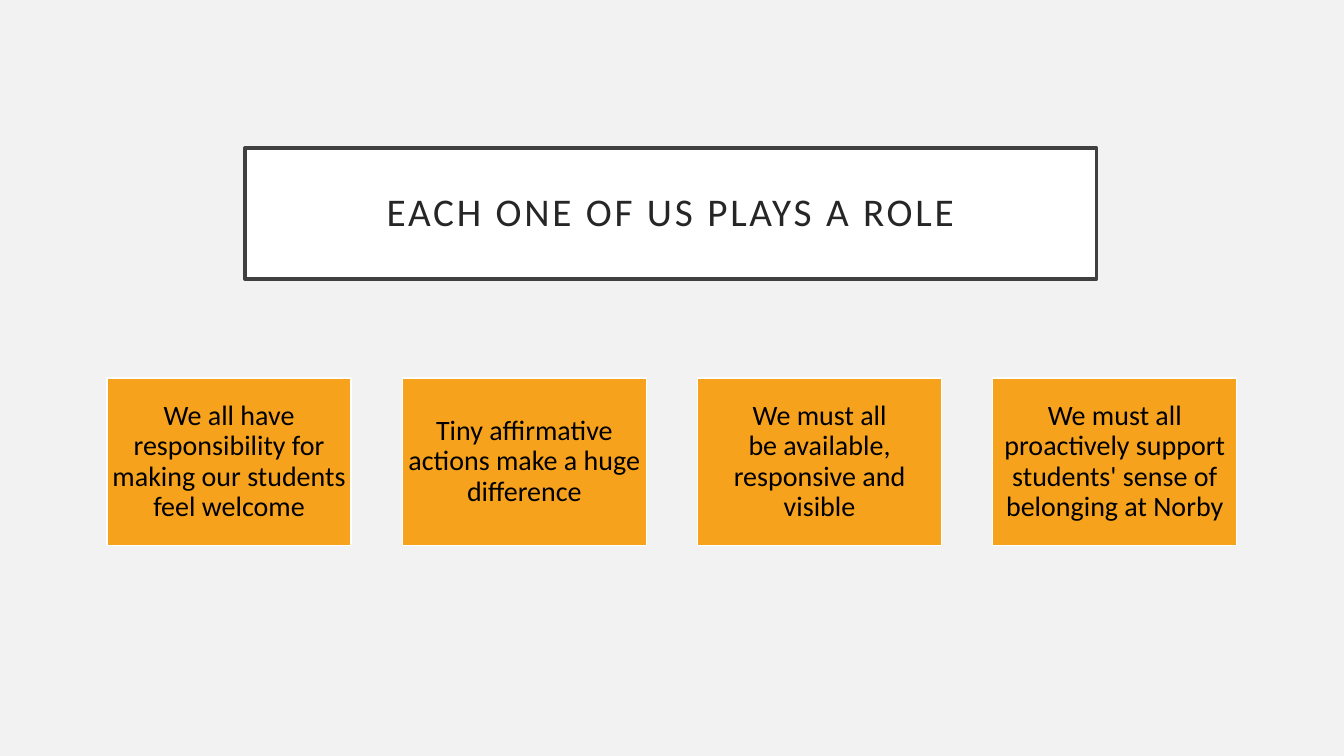
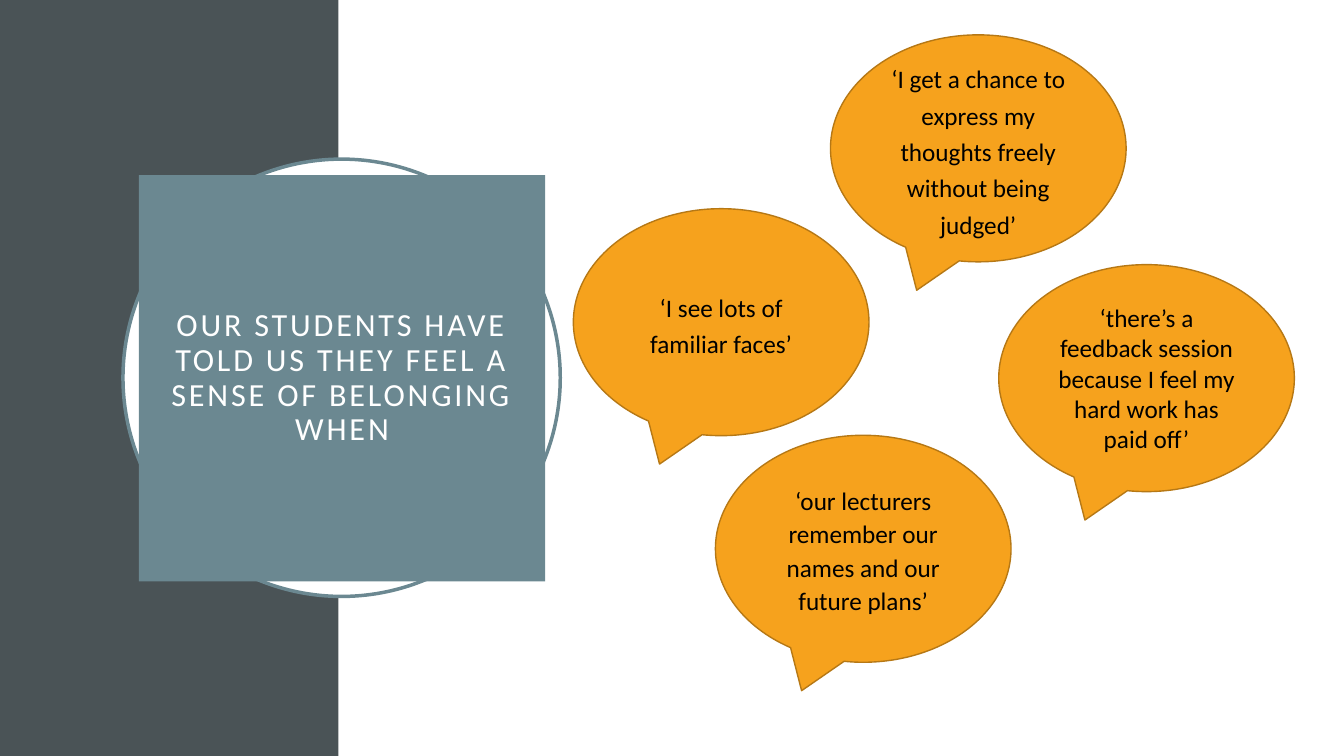
import pptx
import pptx.dml.color
import pptx.enum.shapes
import pptx.enum.text
import pptx.util

Cm = pptx.util.Cm
Pt = pptx.util.Pt
hue = pptx.dml.color.RGBColor.from_string
kinds = pptx.enum.shapes.MSO_SHAPE

gold, slate, teal = "F6A21D", "4A5356", "6B8891"
white, black, pale = "FFFFFF", "000000", "F2F2F2"
hard = chr(160)
frame = {
    "word_wrap": True,
    "auto_size": pptx.enum.text.MSO_AUTO_SIZE.NONE,
    "vertical_anchor": pptx.enum.text.MSO_ANCHOR.MIDDLE,
}
sides = ["margin_left", "margin_top", "margin_right", "margin_bottom"]
tight = dict.fromkeys(sides, Cm(0.03))
roomy = dict.fromkeys(sides, Cm(0.51))


def paint(shape, fill, line=None, width=1):
    shape.fill.solid()
    shape.fill.fore_color.rgb = hue(fill)
    if line:
        shape.line.color.rgb = hue(line)
        shape.line.width = Pt(width)
    else:
        shape.line.fill.background()


def write(shape, text, size, color, gap, pad={}, after=0):
    body = shape.text_frame
    for name, value in {**frame, **pad}.items():
        setattr(body, name, value)
    para = body.paragraphs[0]
    look = {
        "alignment": pptx.enum.text.PP_ALIGN.CENTER,
        "line_spacing": gap,
        "space_after": Pt(after),
    }
    for name, value in look.items():
        setattr(para, name, value)
    run = para.add_run()
    run.text = text
    for name, value in {"name": "Calibri", "size": Pt(size)}.items():
        setattr(run.font, name, value)
    run.font.color.rgb = hue(color)
    return run


deck = pptx.Presentation()
deck.slide_width, deck.slide_height = Cm(33.87), Cm(19.05)

heads = [
    {
        "text": "EACH ONE OF US PLAYS A ROLE",
        "back": pale,
        "place": (6.17, 3.73, 21.46, 3.3),
        "paint": (white, "404040", 2.5),
        "type": (28, "262626"),
    },
    {
        "text": "OUR STUDENTS HAVE TOLD US THEY FEEL A SENSE OF BELONGING WHEN",
        "back": white,
        "place": (3.5, 4.41, 10.24, 10.24),
        "paint": (teal,),
        "type": (23, white),
    },
]
pages = []
for head in heads:
    page = deck.slides.add_slide(deck.slide_layouts[5])
    page.background.fill.solid()
    page.background.fill.fore_color.rgb = hue(head["back"])
    title = page.shapes.title
    spots = [Cm(n) for n in head["place"]]
    for name, value in zip(["left", "top", "width", "height"], spots):
        setattr(title, name, value)
    paint(title, *head["paint"])
    run = write(title, head["text"], *head["type"], 0.9, roomy)
    run.font._element.set("spc", "200")
    pages.append(page)
role, voice = pages

duties = [
    "We all have responsibility for making our students feel welcome",
    "Tiny affirmative actions make a huge difference",
    f"We must all be{hard}available, responsive and visible",
    "We must all proactively support students' sense of belonging at Norby",
]
for i, duty in enumerate(duties):
    card = role.shapes.add_shape(
        kinds.RECTANGLE, Cm(2.7 + 7.44 * i), Cm(9.53), Cm(6.15), Cm(4.22)
    )
    card.shadow.inherit = False
    paint(card, gold, white)
    write(card, duty, 20, black, 0.9, tight)

band = voice.shapes.add_shape(kinds.RECTANGLE, 0, 0, Cm(8.53), deck.slide_height)
paint(band, slate)
ring = voice.shapes.add_shape(kinds.OVAL, Cm(3.1), Cm(4.01), Cm(11.02), Cm(11.02))
paint(ring, white, teal, 2.5)
for shape in [band, ring]:
    shape.shadow.inherit = False
    voice.shapes.title.element.addprevious(shape.element)

quotes = [
    (20.93, 0.88, 1.2, "‘I get a chance to express my thoughts freely without being judged’"),
    (14.45, 5.26, 1.2, "‘I see lots of familiar faces’"),
    (25.17, 6.67, 1.0, "‘there’s a feedback session because I feel my hard work has paid off’"),
    (18.03, 10.97, 1.1, "‘our lecturers remember our names and our future plans’"),
]
for left, top, gap, quote in quotes:
    cloud = voice.shapes.add_shape(
        kinds.OVAL_CALLOUT, Cm(left), Cm(top), Cm(7.45), Cm(5.72)
    )
    cloud.shadow.inherit = False
    paint(cloud, gold, "B67815")
    write(cloud, quote, 18, black, gap, after=6)

deck.save("out.pptx")
